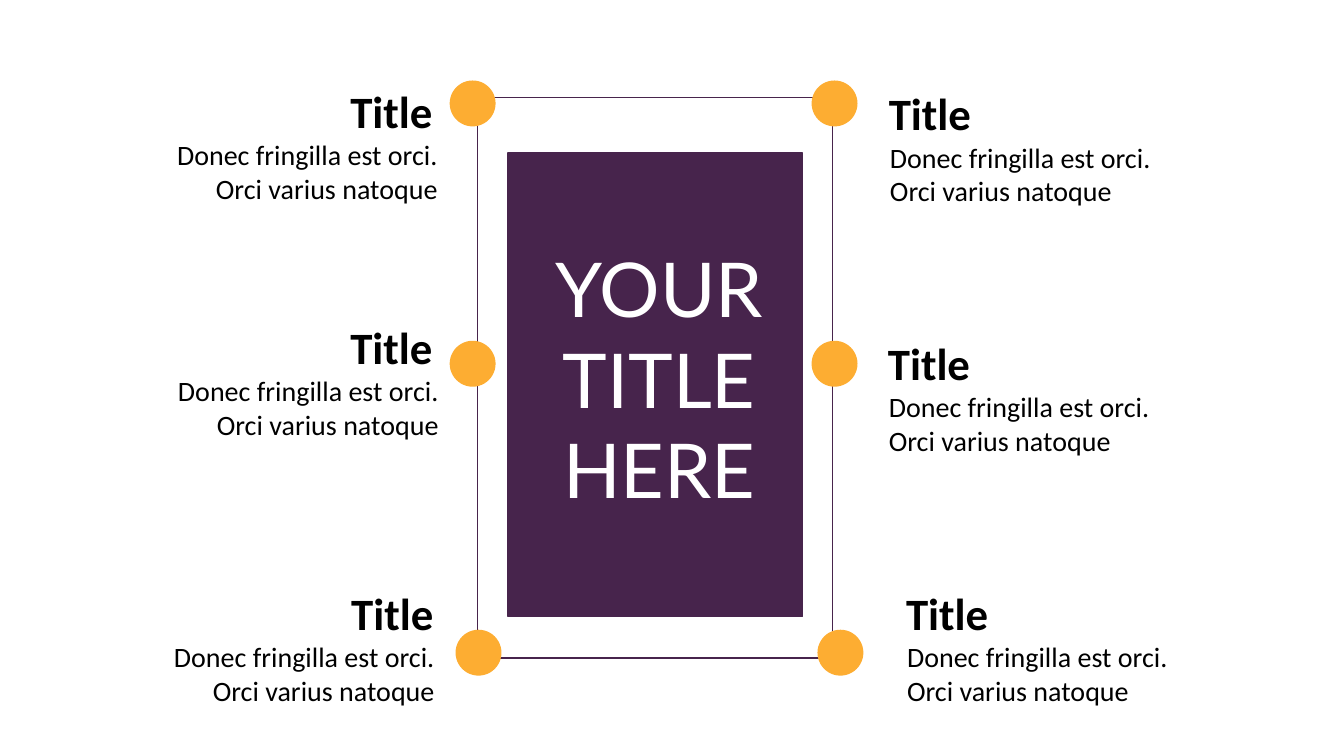
from typing import NamedTuple

from pptx import Presentation
from pptx.dml.color import RGBColor
from pptx.enum.shapes import MSO_SHAPE as Shape
from pptx.enum.text import MSO_AUTO_SIZE as Fit, PP_ALIGN as Align
from pptx.util import Pt

PLUM, GOLD, BLACK, WHITE = "47244C", "FDAD32", "000000", "FFFFFF"
DOT = 32.8
BODY = "Donec fringilla est orci. Orci varius natoque"


class Box(NamedTuple):
    left: float
    top: float
    width: float
    height: float


class Blurb(NamedTuple):
    head: float  # left edge of the title
    left: float  # left edge of the body
    top: float  # top edge of the body
    align: Align


FRAME = Box(341.3, 69.8, 253.4, 400.3)
PANEL = Box(362.9, 109.4, 210.2, 331.2)
LABEL = Box(385.2, 169.2, 171.4, 203.8)

BLURBS = [
    Blurb(627.8, 628.6, 96.5, Align.LEFT),
    Blurb(627.1, 627.8, 275, Align.LEFT),
    Blurb(640.1, 640.8, 453.6, Align.LEFT),
    Blurb(207.4, 95.8, 95, Align.RIGHT),
    Blurb(207.4, 96.5, 263.5, Align.RIGHT),
    Blurb(208, 93.6, 453.6, Align.RIGHT),
]

# Top and left edge of the first dot in each row
ROWS = [(57.5, 321.2), (243.4, 321.2), (449.8, 325.4)]
GAP = 258.5

deck = Presentation()
deck.slide_width, deck.slide_height = Pt(960), Pt(540)
slide = deck.slides.add_slide(deck.slide_layouts[6])


def color(code: str) -> RGBColor:
    return RGBColor.from_string(code)


def draw(kind: Shape, box: Box, fill: str = "", line: str = "") -> None:
    item = slide.shapes.add_shape(kind, *map(Pt, box))
    item.shadow.inherit = False
    if fill:
        item.fill.solid()
        item.fill.fore_color.rgb = color(fill)
    else:
        item.fill.background()
    if line:
        item.line.color.rgb = color(line)
        item.line.width = Pt(1)
    else:
        item.line.fill.background()


def write(text: str, box: Box, *, size: float, align: Align, font: str = "Calibri",
          ink: str = BLACK, bold: bool = False) -> None:
    frame = slide.shapes.add_textbox(*map(Pt, box)).text_frame
    frame.word_wrap = True
    frame.auto_size = Fit.SHAPE_TO_FIT_TEXT
    para = frame.paragraphs[0]
    para.alignment = align
    run = para.add_run()
    run.text = text
    run.font.name, run.font.size, run.font.bold = font, Pt(size), bold
    run.font.color.rgb = color(ink)


# Frame and centre panel
draw(Shape.RECTANGLE, FRAME, line=PLUM)
draw(Shape.RECTANGLE, PANEL, fill=PLUM, line=PLUM)

# Titles and bodies on both sides
for blurb in BLURBS:
    write(BODY, Box(blurb.left, blurb.top, 223.9, 55.4), size=20, align=blurb.align)
    write("Title", Box(blurb.head, blurb.top - 39, 108.7, 46.1), size=32,
          align=blurb.align, bold=True)

# Panel label
write("YOUR TITLE HERE", LABEL, size=54, align=Align.CENTER, font="Lato", ink=WHITE)

# Dots along the frame
for top, left in ROWS:
    for side in range(2):
        draw(Shape.OVAL, Box(left + side * GAP, top, DOT, DOT), fill=GOLD)

deck.save("out.pptx")
